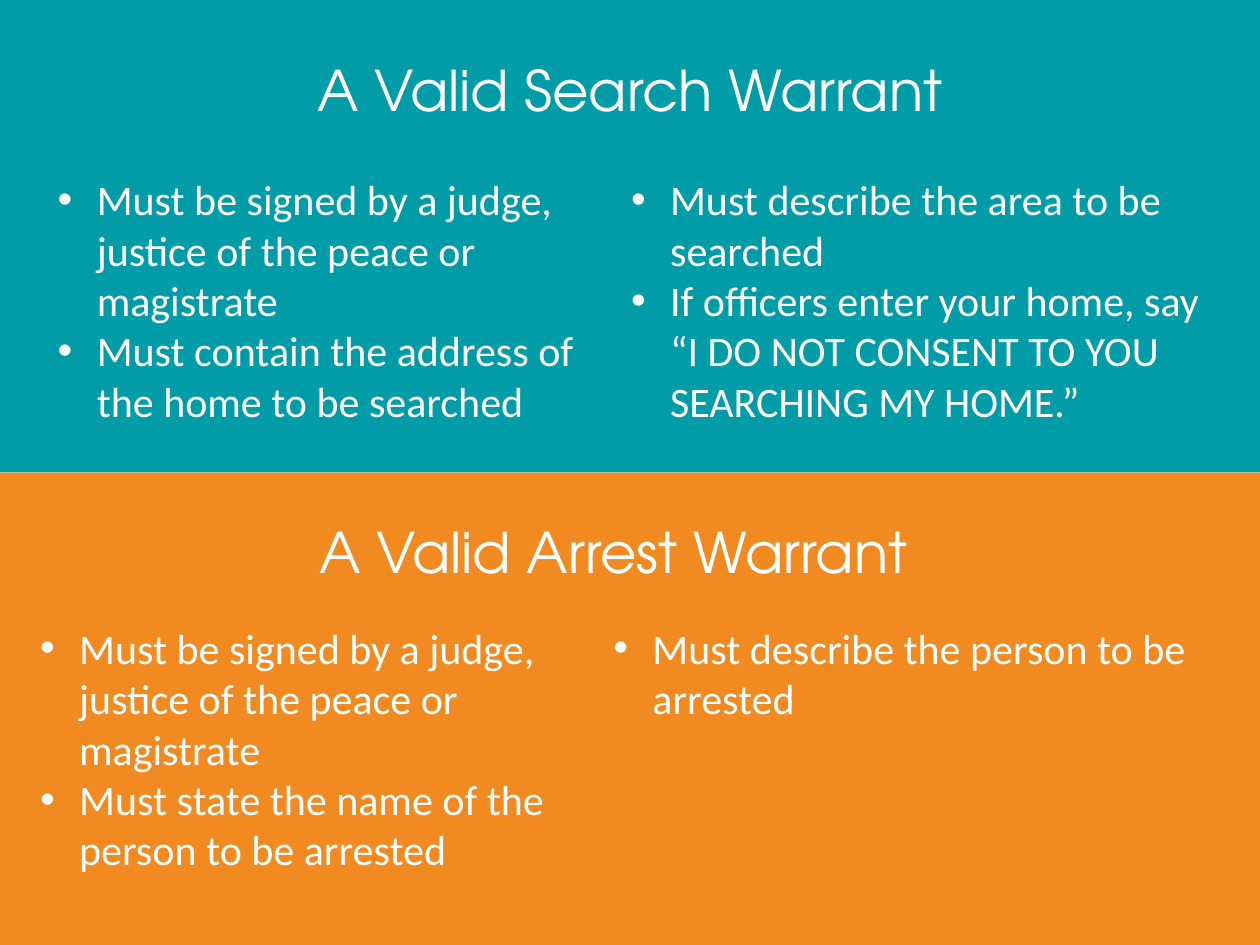
"""Build a slide comparing valid search and arrest warrants in two stacked panels."""
import pptx
import pptx.dml.color
import pptx.enum.shapes
import pptx.enum.text
import pptx.util
from lxml import etree

COLORS = {"search": "009CA7", "arrest": "F18B21", "text": "FFFFFF"}
SIGNED = "Must be signed by a judge, justice of the peace or magistrate"
PANELS = [
    {"fill": "search", "title": "A Valid Search Warrant", "title_at": (0, 0.39), "body_at": (0.36, 1.33),
     "columns": [
         [SIGNED, "Must contain the address of the home to be searched"],
         ["Must describe the area to be searched",
          "If officers enter your home, say “I DO NOT CONSENT TO YOU SEARCHING MY HOME.”"]]},
    {"fill": "arrest", "title": "A Valid Arrest Warrant", "title_at": (-0.13, 0.31), "body_at": (0.22, 1.14),
     "columns": [
         [SIGNED, "Must state the name of the person to be arrested"],
         ["Must describe the person to be arrested"]]},
]
WIDTH, HEIGHT = 10, 7.5
PANEL_H = HEIGHT / len(PANELS)
TITLE_H, BODY_H = 0.64, 2.2
COLUMN_W, INSET, INDENT = 4.55, 0.1, 0.31

Inches = pptx.util.Inches


def rgb(name):
    return pptx.dml.color.RGBColor.from_string(COLORS[name])


def add_bullet(p):
    pPr = p._p.get_or_add_pPr()
    pPr.set("marL", str(Inches(INDENT)))
    pPr.set("indent", str(-Inches(INDENT)))
    for tag, attr, value in (("buFont", "typeface", "Arial"), ("buChar", "char", "•")):
        etree.SubElement(pPr, pptx.oxml.ns.qn(f"a:{tag}")).set(attr, value)


def add_text(s, lines, x, y, w, h, *, size, font, align=None, bullets=False):
    tf = s.shapes.add_textbox(*map(Inches, (x, y, w, h))).text_frame
    tf.word_wrap = True
    for i, line in enumerate(lines):
        p = tf.paragraphs[0] if i == 0 else tf.add_paragraph()
        p.alignment = align
        if bullets:
            add_bullet(p)
        r = p.add_run()
        r.text = line
        r.font.size = pptx.util.Pt(size)
        r.font.name = font
        r.font.color.rgb = rgb("text")


def add_panel(s, panel, top):
    sp = s.shapes.add_shape(pptx.enum.shapes.MSO_SHAPE.RECTANGLE,
                            *map(Inches, (0, top, WIDTH, PANEL_H)))
    sp.shadow.inherit = False
    sp.fill.solid()
    sp.fill.fore_color.rgb = rgb(panel["fill"])
    sp.line.fill.background()
    x, y = panel["title_at"]
    add_text(s, [panel["title"]], x, top + y, WIDTH, TITLE_H, size=32,
             font="TeX Gyre Adventor", align=pptx.enum.text.PP_ALIGN.CENTER)
    x, y = panel["body_at"]
    for col, lines in enumerate(panel["columns"]):
        add_text(s, lines, x + col * COLUMN_W, top + y, COLUMN_W + 2 * INSET, BODY_H,
                 size=24, font="Calibri", bullets=True)


def main():
    prs = pptx.Presentation()
    prs.slide_width, prs.slide_height = Inches(WIDTH), Inches(HEIGHT)
    s = prs.slides.add_slide(prs.slide_layouts[6])
    for row, panel in enumerate(PANELS):
        add_panel(s, panel, row * PANEL_H)
    prs.save("out.pptx")


if __name__ == "__main__":
    main()
